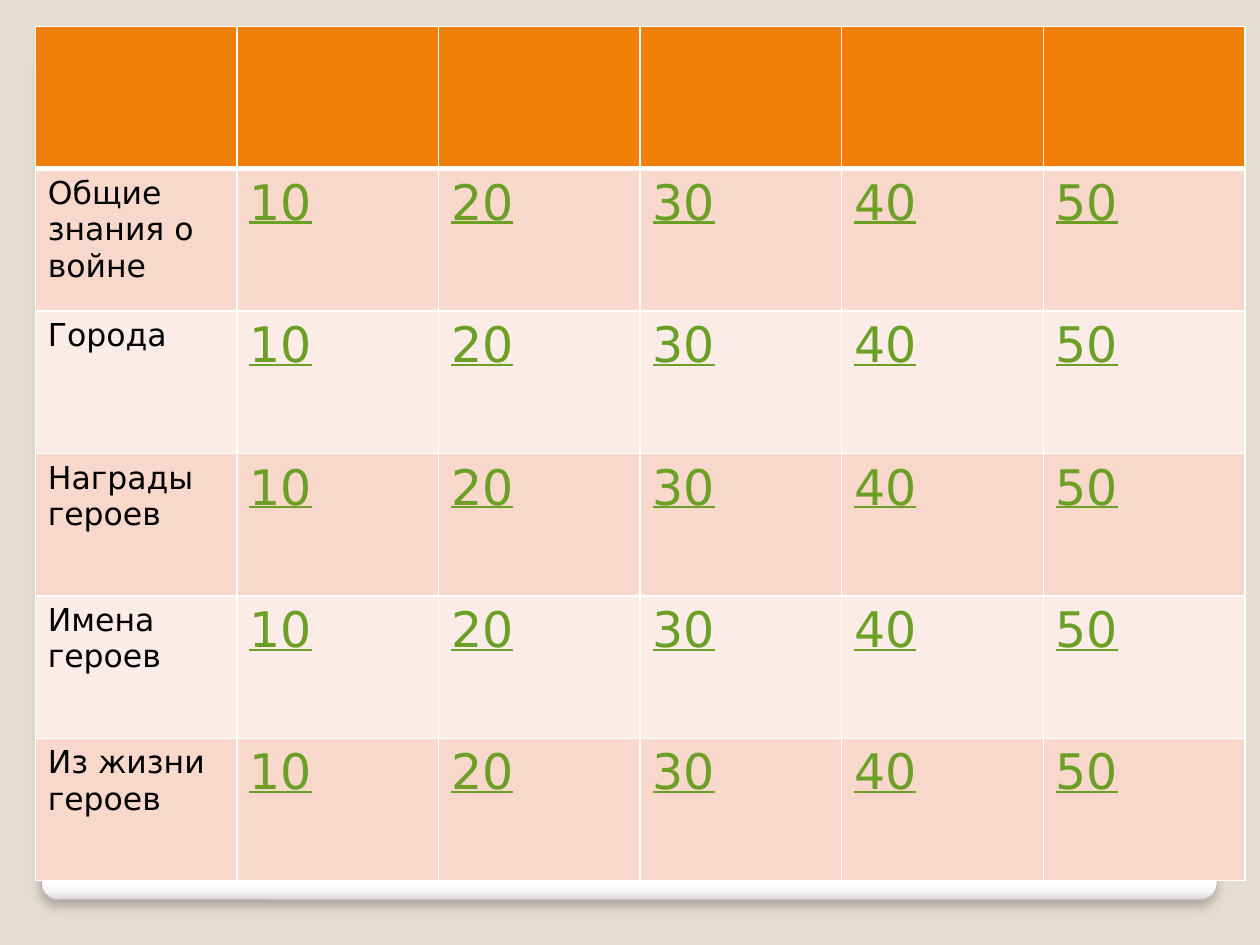
import pptx
import pptx.util
import pptx.dml.color
import pptx.enum.shapes
import pptx.oxml
import pptx.oxml.ns
from pptx.util import Inches

FONT = "DejaVu Sans"
NS = pptx.oxml.ns.nsdecls("a")


def color(hex_string):
    return pptx.dml.color.RGBColor.from_string(hex_string)


def add_border(cell, side, width):
    cell._tc.get_or_add_tcPr().append(pptx.oxml.parse_xml(
        f'<a:{side} {NS} w="{pptx.util.Pt(width)}"><a:solidFill>'
        f'<a:srgbClr val="FFFFFF"/></a:solidFill></a:{side}>'))


prs = pptx.Presentation()
prs.slide_width, prs.slide_height = Inches(10), Inches(7.5)
slide = prs.slides.add_slide(prs.slide_layouts[6])
slide.background.fill.solid()
slide.background.fill.fore_color.rgb = color("E3DED1")

# White panel behind the board, shaded at its lower edge
panel = slide.shapes.add_shape(
    pptx.enum.shapes.MSO_SHAPE.ROUNDED_RECTANGLE,
    Inches(0.33), Inches(0.36), Inches(9.33), Inches(6.78))
panel.adjustments[0] = 0.02
panel.line.color.rgb = color("A4A4A4")
panel.line.width = pptx.util.Pt(0.16)
panel.fill.gradient()
panel.fill.gradient_angle = 270
stops = panel._element.spPr.find(".//" + pptx.oxml.ns.qn("a:gsLst"))
for old_stop in list(stops):
    stops.remove(old_stop)
for percent, shade in [(0, "FFFFFF"), (98, "FFFFFF"), (99, "F7F7F7"), (100, "DADADA")]:
    stops.append(pptx.oxml.parse_xml(
        f'<a:gs {NS} pos="{percent * 1000}"><a:srgbClr val="{shade}"/></a:gs>'))

# Soft shadow below the panel
panel.shadow.inherit = False
effects = panel._element.spPr.find(pptx.oxml.ns.qn("a:effectLst"))
effects.append(pptx.oxml.parse_xml(
    f'<a:outerShdw {NS} blurRad="{pptx.util.Pt(6)}" dist="{pptx.util.Pt(4)}" '
    'dir="5400000" algn="t" rotWithShape="0"><a:srgbClr val="000000">'
    '<a:alpha val="25000"/></a:srgbClr></a:outerShdw>'))

# Question board: an empty header row, then one row per topic
topics = ["Общие знания о войне", "Города", "Награды\nгероев",
          "Имена героев", "Из жизни героев"]
points = ["10", "20", "30", "40", "50"]
rows = [[""] * 6] + [[topic] + points for topic in topics]

board = slide.shapes.add_table(
    len(rows), 6, Inches(0.28), Inches(0.21), Inches(9.61), Inches(6.78)).table
for column in board.columns:
    column.width = Inches(1.6)

for row_index, row in enumerate(rows):
    board.rows[row_index].height = Inches(1.13)
    if row_index == 0:
        row_fill = "F07F09"
    else:
        row_fill = "F9D8CC" if row_index % 2 else "FCECE7"
    for column_index, label in enumerate(row):
        cell = board.cell(row_index, column_index)
        add_border(cell, "lnL", 1)
        add_border(cell, "lnR", 1)
        add_border(cell, "lnT", 3 if row_index == 1 else 1)
        add_border(cell, "lnB", 3 if row_index == 0 else 1)
        cell.fill.solid()
        cell.fill.fore_color.rgb = color(row_fill)
        if not label:
            continue
        is_points = column_index > 0
        for line_index, line in enumerate(label.split("\n")):
            frame = cell.text_frame
            paragraph = frame.add_paragraph() if line_index else frame.paragraphs[0]
            run = paragraph.add_run()
            run.text = line
            run.font.name = FONT
            run.font.size = pptx.util.Pt(28 if is_points else 18)
            run.font.underline = is_points
            run.font.color.rgb = color("6B9F25" if is_points else "000000")

prs.save("out.pptx")
